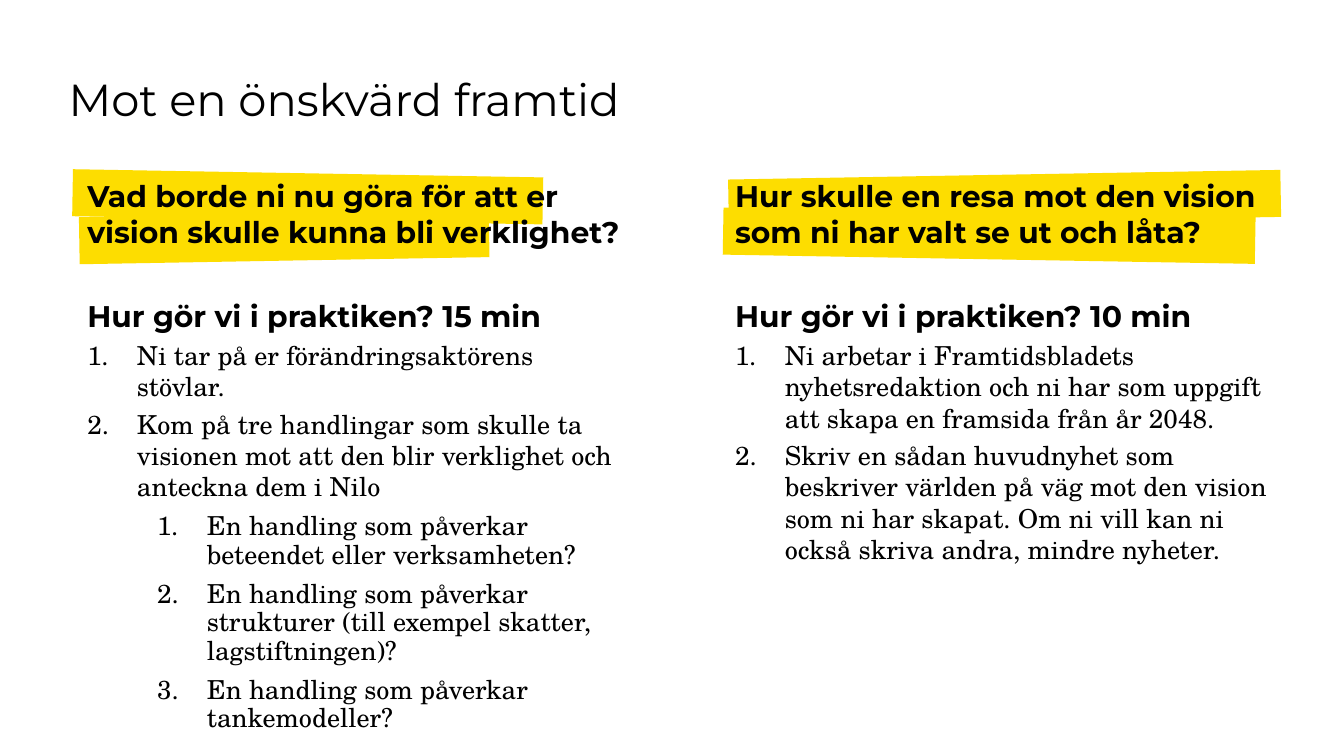
import pptx
import pptx.util
import pptx.dml.color
import pptx.enum.shapes
import pptx.enum.text
import pptx.oxml.ns
import lxml.etree

Inches, Pt = pptx.util.Inches, pptx.util.Pt
COLOURS = {"text": "000000", "marker": "FDDD00"}
HEADING, BODY = "Montserrat", "TeX Gyre Schola"

# Widescreen page, 16:9
deck = pptx.Presentation()
deck.slide_width = Inches(10)
deck.slide_height = Inches(10) * 9 // 16
page = deck.slides.add_slide(deck.slide_layouts[6])


def add_box(left, top, width, height):
    box = page.shapes.add_textbox(Inches(left), Inches(top), Inches(width), Inches(height))
    frame = box.text_frame
    frame.word_wrap = True
    frame.margin_left = frame.margin_right = frame.margin_top = frame.margin_bottom = 0
    return frame


def add_span(para, text, font, size, bold=False):
    span = para.add_run()
    span.text = text
    span.font.name, span.font.size, span.font.bold = font, Pt(size), bold
    span.font.color.rgb = pptx.dml.color.RGBColor.from_string(COLOURS["text"])


# Yellow marker strokes behind the questions: left, top, width, rotation
strokes = [
    (5.42, 1.3, 4.11, 359),
    (5.38, 1.58, 3.96, 1),
    (0.59, 1.59, 3.05, 359),
    (0.54, 1.29, 3.5, 1),
]
for left, top, width, rotation in strokes:
    stroke = page.shapes.add_shape(
        pptx.enum.shapes.MSO_SHAPE.RECTANGLE,
        Inches(left), Inches(top), Inches(width), Inches(0.35))
    stroke.rotation = rotation
    stroke.shadow.inherit = False
    stroke.fill.solid()
    stroke.fill.fore_color.rgb = pptx.dml.color.RGBColor.from_string(COLOURS["marker"])
    stroke.line.fill.background()

# Paragraph styles: level, left margin, first-line indent, space before, line spacing
styles = {
    "question": (0, 0.14, 0, 0, 1),
    "heading": (0, 0.14, 0, 25.9, 1),
    "step": (0, 0.51, -0.37, 3.2, 1),
    "substep": (1, 1.03, -0.37, 6, 0.9),
}

# Columns: left, height, paragraphs
columns = [
    (5.33, 2.94, [
        ("question", "Hur skulle en resa mot den vision som ni har valt se ut och låta?"),
        ("heading", "Hur gör vi i praktiken? 10 min"),
        ("step", "Ni arbetar i Framtidsbladets nyhetsredaktion och ni har som uppgift "
                 "att skapa en framsida från år 2048."),
        ("step", "Skriv en sådan huvudnyhet som beskriver världen på väg mot den vision "
                 "som ni har skapat. Om ni vill kan ni också skriva andra, mindre nyheter."),
    ]),
    (0.51, 3.82, [
        ("question", "Vad borde ni nu göra för att er vision skulle kunna bli verklighet?"),
        ("heading", "Hur gör vi i praktiken? 15 min"),
        ("step", "Ni tar på er förändringsaktörens stövlar."),
        ("step", "Kom på tre handlingar som skulle ta visionen mot att den blir "
                 "verklighet och anteckna dem i Nilo"),
        ("substep", "En handling som påverkar beteendet eller verksamheten?"),
        ("substep", "En handling som påverkar strukturer (till exempel skatter, lagstiftningen)?"),
        ("substep", "En handling som påverkar tankemodeller?"),
    ]),
]
for left, height, entries in columns:
    frame = add_box(left, 1.32, 4.13, height)
    for index, (style, text) in enumerate(entries):
        level, margin, indent, before, spacing = styles[style]
        para = frame.paragraphs[0] if index == 0 else frame.add_paragraph()
        para.level = level
        para.line_spacing = spacing
        if index:
            para.space_before = Pt(before)
        properties = para._p.get_or_add_pPr()
        properties.set("marL", str(Inches(margin)))
        properties.set("indent", str(Inches(indent)))
        numbered = indent < 0
        if numbered:
            number = lxml.etree.SubElement(properties, pptx.oxml.ns.qn("a:buAutoNum"))
            number.set("type", "arabicPeriod")
            add_span(para, text, BODY, 14)
        else:
            add_span(para, text, HEADING, 16, bold=True)

# Title
title = add_box(0.51, 0.29, 8.98, 0.88)
title.vertical_anchor = pptx.enum.text.MSO_ANCHOR.MIDDLE
add_span(title.paragraphs[0], "Mot en önskvärd framtid", HEADING, 24)

deck.save("out.pptx")
